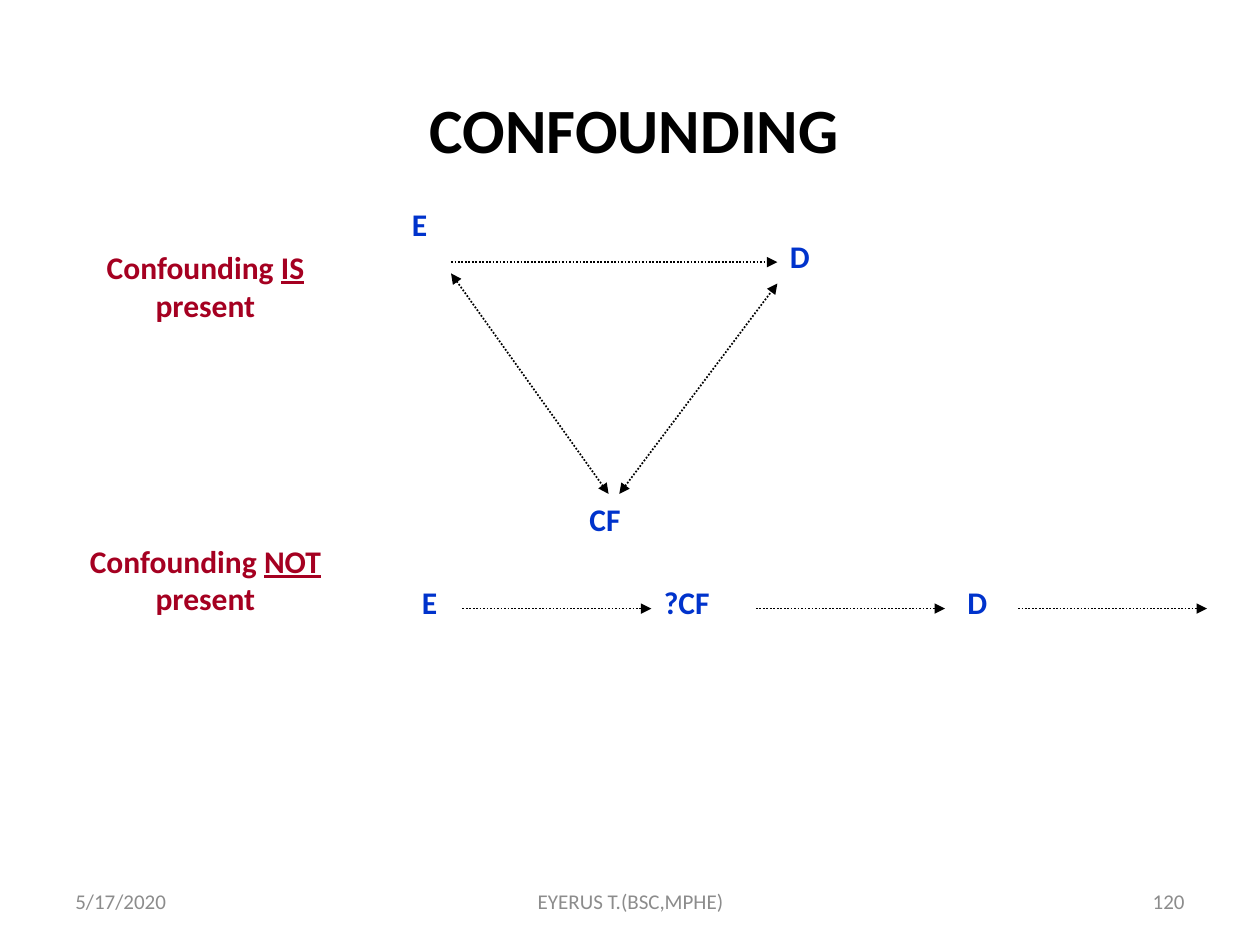
from dataclasses import dataclass
from typing import NamedTuple, Optional

from pptx import Presentation
from pptx.dml.color import RGBColor
from pptx.enum.dml import MSO_LINE
from pptx.enum.shapes import MSO_CONNECTOR
from pptx.enum.text import MSO_ANCHOR, PP_ALIGN
from pptx.oxml.ns import qn
from pptx.shapes.autoshape import Shape
from pptx.slide import Slide
from pptx.util import Inches, Pt
from lxml.etree import SubElement


@dataclass(frozen=True)
class Theme:
    font: str = "Calibri"
    ink: RGBColor = RGBColor(0x00, 0x00, 0x00)
    node: RGBColor = RGBColor(0x00, 0x33, 0xCC)
    caption: RGBColor = RGBColor(0xA5, 0x00, 0x21)
    muted: RGBColor = RGBColor(0x8C, 0x8C, 0x8C)
    title_size: Pt = Pt(36)
    label_size: Pt = Pt(18)
    footer_size: Pt = Pt(12)
    arrow_width: Pt = Pt(1)


THEME = Theme()


class Box(NamedTuple):
    left: float
    top: float
    width: float
    height: float


class Point(NamedTuple):
    x: float
    y: float


class Joint(NamedTuple):
    node: str
    site: int


@dataclass(frozen=True)
class Node:
    key: str
    text: str
    box: Box


@dataclass(frozen=True)
class Caption:
    stressed: str
    box: Box


@dataclass(frozen=True)
class Footer:
    text: str
    box: Box
    align: PP_ALIGN


@dataclass(frozen=True)
class Arrow:
    start: Point
    end: Point
    two_way: bool = False
    start_joint: Optional[Joint] = None
    end_joint: Optional[Joint] = None


TOP, LEFT, RIGHT = 0, 1, 3
CHAIN_TOP, CHAIN_Y = 4.58, 4.83
FOOTER_TOP, FOOTER_HEIGHT = 6.95, 0.4

NODES = [
    Node("exposure", "E", Box(3.17, 1.58, 0.5, 0.5)),
    Node("disease", "D", Box(6.17, 1.83, 0.5, 0.5)),
    Node("confounder", "CF", Box(4.58, 3.92, 0.67, 0.5)),
    Node("chain exposure", "E", Box(3.25, CHAIN_TOP, 0.5, 0.5)),
    Node("chain confounder", "?CF", Box(5.17, CHAIN_TOP, 0.92, 0.5)),
    Node("chain disease", "D", Box(7.58, CHAIN_TOP, 0.5, 0.5)),
]
CAPTIONS = [
    Caption("IS", Box(0.17, 1.92, 2.92, 0.9)),
    Caption("NOT", Box(0.17, 4.25, 2.92, 1.3)),
]
ARROWS = [
    Arrow(Point(3.58, 2.08), Point(6.17, 2.08), end_joint=Joint("disease", LEFT)),
    Arrow(Point(3.58, 2.17), Point(4.83, 3.92), two_way=True),
    Arrow(Point(4.92, 3.92), Point(6.17, 2.25), two_way=True,
          start_joint=Joint("confounder", TOP)),
    Arrow(Point(3.67, CHAIN_Y), Point(5.17, CHAIN_Y),
          end_joint=Joint("chain confounder", LEFT)),
    Arrow(Point(6, CHAIN_Y), Point(7.5, CHAIN_Y)),
    Arrow(Point(8.08, CHAIN_Y), Point(9.58, CHAIN_Y),
          start_joint=Joint("chain disease", RIGHT)),
]
FOOTERS = [
    Footer("5/17/2020", Box(0.5, FOOTER_TOP, 2.33, FOOTER_HEIGHT), PP_ALIGN.LEFT),
    Footer("EYERUS T.(BSC,MPHE)", Box(3.42, FOOTER_TOP, 3.17, FOOTER_HEIGHT), PP_ALIGN.CENTER),
    Footer("120", Box(7.17, FOOTER_TOP, 2.33, FOOTER_HEIGHT), PP_ALIGN.RIGHT),
]


def add_text(slide: Slide, box: Box, lines: list[str], size: Pt, color: RGBColor,
             bold: bool = True, align: PP_ALIGN = PP_ALIGN.CENTER,
             anchor: MSO_ANCHOR = MSO_ANCHOR.TOP) -> Shape:
    label = slide.shapes.add_textbox(*map(Inches, box))
    frame = label.text_frame
    frame.word_wrap = True
    frame.vertical_anchor = anchor
    frame.text = "\n".join(lines)
    for paragraph in frame.paragraphs:
        paragraph.alignment = align
        paragraph.font.name = THEME.font
        paragraph.font.size = size
        paragraph.font.bold = bold
        paragraph.font.color.rgb = color
    return label


def add_caption(slide: Slide, caption: Caption) -> None:
    label = add_text(slide, caption.box, ["Confounding ", "present"],
                     THEME.label_size, THEME.caption)
    stressed = label.text_frame.paragraphs[0].add_run()
    stressed.text = caption.stressed
    stressed.font.underline = True


def add_arrow(slide: Slide, arrow: Arrow, nodes: dict[str, Shape]) -> None:
    connector = slide.shapes.add_connector(
        MSO_CONNECTOR.STRAIGHT, *map(Inches, (*arrow.start, *arrow.end)))
    if arrow.start_joint:
        connector.begin_connect(nodes[arrow.start_joint.node], arrow.start_joint.site)
    if arrow.end_joint:
        connector.end_connect(nodes[arrow.end_joint.node], arrow.end_joint.site)
    connector.line.color.rgb = THEME.ink
    connector.line.width = THEME.arrow_width
    connector.line.dash_style = MSO_LINE.ROUND_DOT
    properties = connector.element.spPr
    outline = properties.find(qn("a:ln"))
    for tip in ("a:headEnd", "a:tailEnd") if arrow.two_way else ("a:tailEnd",):
        SubElement(outline, qn(tip), type="triangle")
    SubElement(properties, qn("a:effectLst"))


def main() -> None:
    deck = Presentation()
    deck.slide_width, deck.slide_height = Inches(10), Inches(7.5)
    slide = deck.slides.add_slide(deck.slide_layouts[6])

    add_text(slide, Box(3, 0.67, 4.07, 0.71), ["CONFOUNDING"], THEME.title_size, THEME.ink)
    nodes = {
        node.key: add_text(slide, node.box, [node.text], THEME.label_size,
                           THEME.node, align=PP_ALIGN.LEFT)
        for node in NODES
    }
    for caption in CAPTIONS:
        add_caption(slide, caption)
    for arrow in ARROWS:
        add_arrow(slide, arrow, nodes)
    for footer in FOOTERS:
        add_text(slide, footer.box, [footer.text], THEME.footer_size, THEME.muted,
                 bold=False, align=footer.align, anchor=MSO_ANCHOR.MIDDLE)

    deck.save("out.pptx")


if __name__ == "__main__":
    main()
